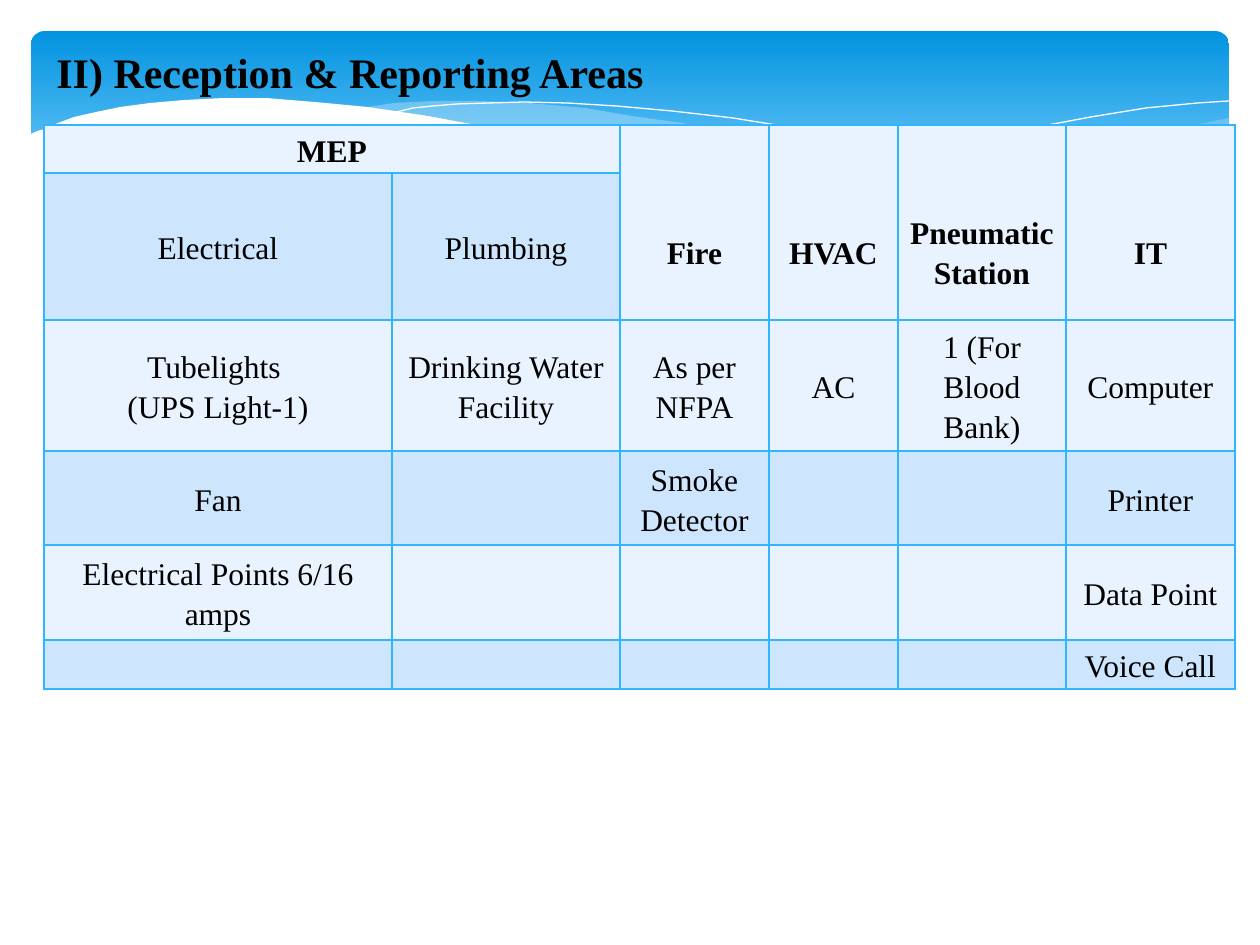
from lxml import etree
from pptx import Presentation
from pptx.dml.color import RGBColor
from pptx.enum.shapes import MSO_SHAPE
from pptx.enum.text import MSO_ANCHOR, PP_ALIGN
from pptx.oxml.ns import qn
from pptx.util import Pt

ROUNDED = MSO_SHAPE.ROUNDED_RECTANGLE
MIDDLE = MSO_ANCHOR.MIDDLE
CENTER = PP_ALIGN.CENTER
SCALE = 914400 / 126
FONT = "Times New Roman"
BLACK = RGBColor(0x00, 0x00, 0x00)
WHITE = RGBColor(0xFF, 0xFF, 0xFF)
BANNER_TOP = RGBColor(0x02, 0x93, 0xE0)
BANNER_BOTTOM = RGBColor(0x83, 0xD3, 0xFE)
MIST = RGBColor(0xC6, 0xE7, 0xFC)
BORDER = RGBColor(0x31, 0xB6, 0xFD)
LIGHT_ROW = RGBColor(0xE8, 0xF3, 0xFF)
DARK_ROW = RGBColor(0xCE, 0xE5, 0xFE)

RIGHT_WAVE = [
    (1229, 118), (1194, 125), (1142, 135), (1085, 149), (1014, 165), (949, 180),
    (889, 191), (833, 202), (906, 210), (969, 215), (1025, 217), (1076, 215),
    (1120, 211), (1160, 203), (1196, 192), (1230, 178), (1230, 118),
]
MIDDLE_WAVE = [
    (1125, 210), (1091, 206), (1055, 200), (977, 188), (890, 169), (793, 146),
    (736, 134), (682, 123), (632, 116), (586, 108), (530, 103), (479, 101),
    (433, 101), (394, 103), (360, 108), (407, 113), (456, 122), (509, 134),
    (566, 146), (668, 170), (757, 189), (838, 202), (913, 212), (986, 217),
    (1043, 218), (1092, 215),
]
LEFT_CURVE = [
    (389, 113), (401, 111), (413, 108), (433, 106), (457, 104), (488, 103),
    (524, 102), (567, 103), (616, 106), (672, 111), (733, 118), (801, 129),
    (876, 144), (958, 161), (1047, 183), (1143, 209),
]
RIGHT_CURVE = [
    (772, 190), (823, 178), (876, 164), (942, 147), (1016, 131), (1091, 117),
    (1146, 108), (1198, 103), (1229, 101),
]
FRONT_WAVE = [
    (1231, 178), (1197, 190), (1159, 201), (1118, 209), (1071, 213), (1019, 215),
    (959, 214), (892, 208), (816, 197), (730, 181), (634, 161), (563, 144),
    (492, 128), (428, 116), (368, 107), (315, 102), (266, 98), (223, 98),
    (184, 100), (150, 103), (120, 107), (96, 112), (74, 117), (58, 123),
    (45, 129), (37, 131), (29, 135), (29, 282), (1231, 282),
]
WAVES = [
    (RIGHT_WAVE, MIST, 29), (MIDDLE_WAVE, MIST, 40), (LEFT_CURVE, None, 100),
    (RIGHT_CURVE, None, 100), (FRONT_WAVE, WHITE, 100),
]

COLUMN_WIDTHS = [348, 228, 149, 129, 168, 169]
ROW_HEIGHTS = [48, 147, 131, 94, 95, 49]
ROWS = [
    ["MEP", "", "Fire", "HVAC", "Pneumatic Station", "IT"],
    ["Electrical", "Plumbing", "", "", "", ""],
    ["Tubelights \v(UPS Light-1)", "Drinking Water Facility", "As per NFPA", "AC",
     "1 (For Blood Bank)", "Computer"],
    ["Fan", "", "Smoke Detector", "", "", "Printer"],
    ["Electrical Points 6/16 amps", "", "", "", "", "Data Point"],
    ["", "", "", "", "", "Voice Call"],
]


def px(length):
    return round(length * SCALE)


def style_text(paragraph, size, bold):
    paragraph.font.name = FONT
    paragraph.font.size = Pt(size)
    paragraph.font.bold = bold
    paragraph.font.color.rgb = BLACK


deck = Presentation()
deck.slide_width = px(1260)
deck.slide_height = px(945)
page = deck.slides.add_slide(deck.slide_layouts[6])

banner = page.shapes.add_shape(ROUNDED, px(31), px(31), px(1198), px(197))
banner.adjustments[0] = 0.07
banner.shadow.inherit = False
banner.line.fill.background()
banner.fill.gradient()
banner.fill.gradient_angle = 270
top_stop, bottom_stop = banner.fill.gradient_stops
top_stop.position, top_stop.color.rgb = 0, BANNER_TOP
bottom_stop.position, bottom_stop.color.rgb = 0.9, BANNER_BOTTOM

for points, color, opacity in WAVES:
    builder = page.shapes.build_freeform(*points[0], scale=SCALE)
    builder.add_line_segments(points[1:], close=color is not None)
    wave = builder.convert_to_shape()
    wave.shadow.inherit = False
    if color is None:
        wave.fill.background()
        wave.line.color.rgb = WHITE
        wave.line.width = 0
        continue
    wave.line.fill.background()
    wave.fill.solid()
    wave.fill.fore_color.rgb = color
    if opacity < 100:
        tint = wave.fill._xPr.find(qn("a:solidFill"))[0]
        etree.SubElement(tint, qn("a:alpha"), val=str(opacity * 1000))

title = page.shapes.add_textbox(px(44), px(40), px(692), px(63))
title.text_frame.word_wrap = True
title.text_frame.text = "II) Reception & Reporting Areas"
style_text(title.text_frame.paragraphs[0], 24, True)

table = page.shapes.add_table(
    len(ROWS), len(COLUMN_WIDTHS), px(44), px(125),
    px(sum(COLUMN_WIDTHS)), px(sum(ROW_HEIGHTS)),
).table
for column, width in zip(table.columns, COLUMN_WIDTHS):
    column.width = px(width)
for row, height in zip(table.rows, ROW_HEIGHTS):
    row.height = px(height)

for row_index, texts in enumerate(ROWS):
    for column_index, text in enumerate(texts):
        cell = table.cell(row_index, column_index)
        cell.vertical_anchor = MIDDLE
        cell.margin_left = cell.margin_right = px(9)
        cell.margin_top = cell.margin_bottom = 0
        cell.fill.solid()
        cell.fill.fore_color.rgb = DARK_ROW if row_index % 2 else LIGHT_ROW
        cell.text_frame.text = text
        paragraph = cell.text_frame.paragraphs[0]
        paragraph.alignment = CENTER
        paragraph.line_spacing = 1.15
        style_text(paragraph, 18, row_index == 0)
        properties = cell._tc.get_or_add_tcPr()
        for position, side in enumerate(("a:lnL", "a:lnR", "a:lnT", "a:lnB")):
            edge = etree.Element(qn(side), w=str(Pt(1)))
            fill = etree.SubElement(edge, qn("a:solidFill"))
            etree.SubElement(fill, qn("a:srgbClr"), val=str(BORDER))
            properties.insert(position, edge)

table.cell(0, 0).merge(table.cell(0, 1))
for column_index in range(2, len(COLUMN_WIDTHS)):
    header = table.cell(0, column_index)
    header.margin_top = px(57)
    header.merge(table.cell(1, column_index))

deck.save("out.pptx")
